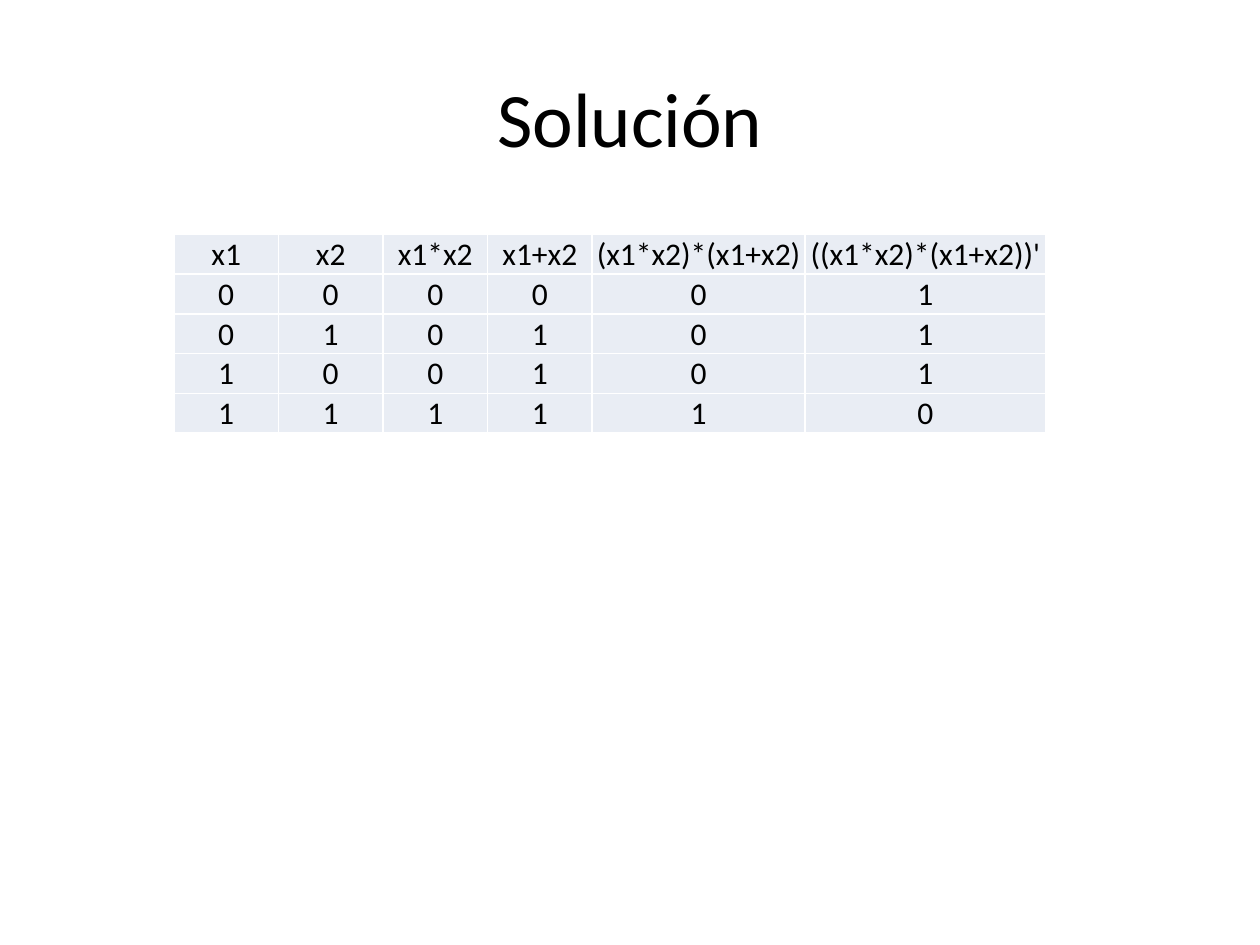
from itertools import product

from lxml import etree
from pptx import Presentation
from pptx.dml.color import RGBColor
from pptx.enum.text import MSO_ANCHOR, PP_ALIGN
from pptx.oxml.ns import qn
from pptx.util import Inches, Pt

CENTER = PP_ALIGN.CENTER
MIDDLE, BOTTOM = MSO_ANCHOR.MIDDLE, MSO_ANCHOR.BOTTOM
COLORS = {"text": "000000", "cell": "E9EDF4", "border": "FFFFFF"}
FONT = "Calibri"
TITLE_ONLY = 5


def format_text(text_frame, size):
    paragraph = text_frame.paragraphs[0]
    paragraph.alignment = CENTER
    font = paragraph.runs[0].font
    font.name, font.size, font.bold = FONT, Pt(size), False
    font.color.rgb = RGBColor.from_string(COLORS["text"])


def add_borders(cell):
    properties = cell._tc.get_or_add_tcPr()
    for side in ("a:lnL", "a:lnR", "a:lnT", "a:lnB"):
        line = etree.SubElement(properties, qn(side), w=str(Pt(1)))
        fill = etree.SubElement(line, qn("a:solidFill"))
        etree.SubElement(fill, qn("a:srgbClr"), val=COLORS["border"])


presentation = Presentation()
presentation.slide_width = Inches(10)
presentation.slide_height = Inches(7.5)
slide = presentation.slides.add_slide(presentation.slide_layouts[TITLE_ONLY])

# Title
title = slide.shapes.title
title.left, title.top = Inches(0.5), Inches(0.3)
title.width, title.height = Inches(9), Inches(1.25)
title.text_frame.text = "Solución"
title.text_frame.vertical_anchor = MIDDLE
format_text(title.text_frame, 44)

# Truth table values
rows = [["x1", "x2", "x1*x2", "x1+x2", "(x1*x2)*(x1+x2)", "((x1*x2)*(x1+x2))'"]]
for x1, x2 in product((0, 1), repeat=2):
    both, either = x1 & x2, x1 | x2
    rows.append([x1, x2, both, either, both & either, 1 - (both & either)])

# Table grid
column_widths = [0.83] * 4 + [1.69, 1.91]
row_height = 0.31
table = slide.shapes.add_table(
    len(rows), len(column_widths), Inches(1.38), Inches(1.86),
    Inches(sum(column_widths)), Inches(row_height * len(rows))).table
table.first_row = table.horz_banding = False
for column, width in zip(table.columns, column_widths):
    column.width = Inches(width)
for row in table.rows:
    row.height = Inches(row_height)

# Table cells
for row_index, values in enumerate(rows):
    for column_index, value in enumerate(values):
        cell = table.cell(row_index, column_index)
        cell.text_frame.text = str(value)
        cell.vertical_anchor = BOTTOM
        cell.margin_left = cell.margin_right = cell.margin_top = Inches(0.01)
        cell.margin_bottom = 0
        format_text(cell.text_frame, 18)
        add_borders(cell)
        cell.fill.solid()
        cell.fill.fore_color.rgb = RGBColor.from_string(COLORS["cell"])

presentation.save("out.pptx")
